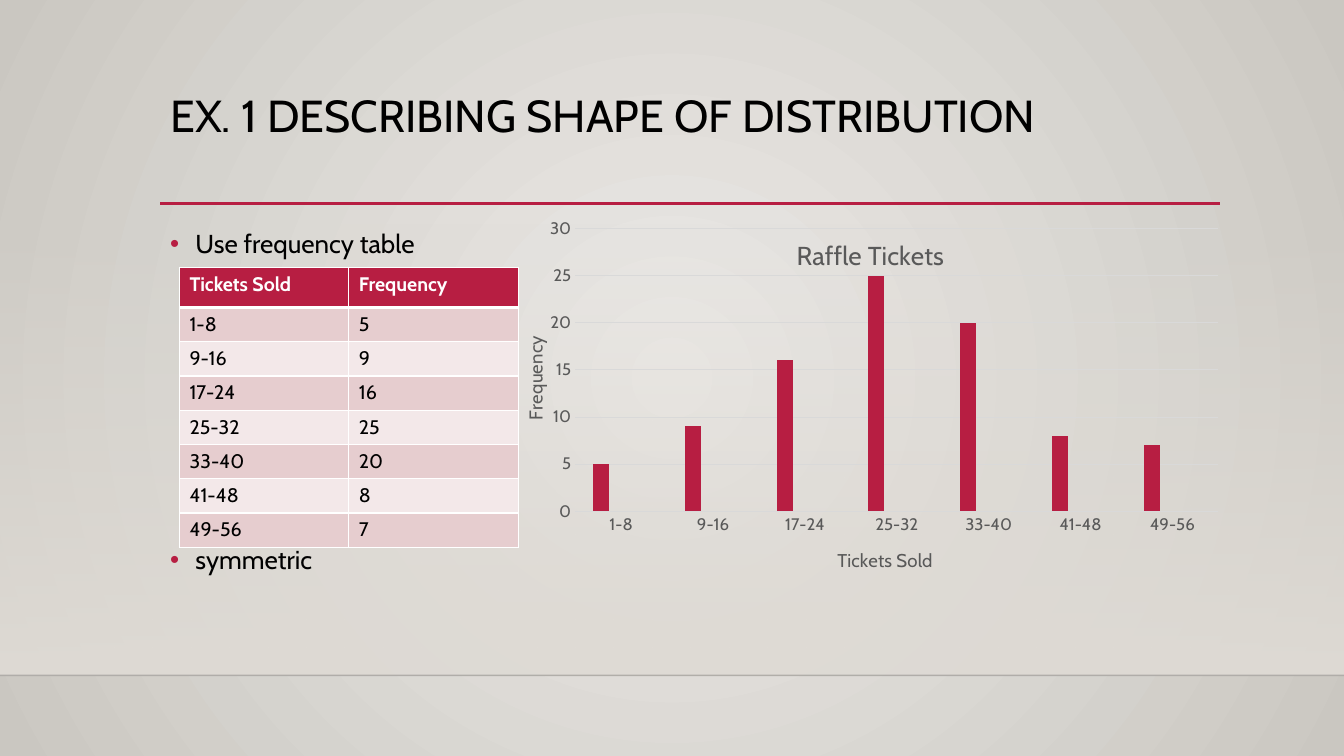
from lxml.etree import SubElement as Sub
from pptx import Presentation
from pptx.chart.data import CategoryChartData
from pptx.dml.color import RGBColor
from pptx.enum.chart import XL_CHART_TYPE as Chart, XL_TICK_MARK as Tick
from pptx.enum.shapes import MSO_CONNECTOR as Conn, MSO_SHAPE as Shape
from pptx.oxml import parse_xml
from pptx.oxml.ns import nsdecls, qn
from pptx.util import Inches, Pt

FONT = "Cabin"
BLACK = RGBColor(0, 0, 0)
WHITE = RGBColor(255, 255, 255)
RED = RGBColor(0xB7, 0x1E, 0x42)
PINK = RGBColor(0xDE, 0x47, 0x8E)
PURPLE = RGBColor(0xBC, 0x72, 0xF0)
ROSE = RGBColor(0xE6, 0xCD, 0xCF)
BLUSH = RGBColor(0xF3, 0xE8, 0xE9)
GRAY = RGBColor(0x59, 0x59, 0x59)
RULE = RGBColor(0xD9, 0xD9, 0xD9)
INK = RGBColor(0, 0, 1)
PALE = RGBColor(0xEC, 0xEA, 0xE7)
STONE = RGBColor(0xCA, 0xC7, 0xC1)
SAND = RGBColor(0xDF, 0xDB, 0xD5)


def write(frame, text, size=14, color=BLACK, bold=False,
          bullet=False, before=0, line=None):
    """Fill the first paragraph, or add one if it is taken."""
    para = frame.paragraphs[0]
    if para.runs:
        para = frame.add_paragraph()
    if line:
        para.line_spacing = line
    if before:
        para.space_before = Pt(before)
    if bullet:
        props = para._p.get_or_add_pPr()
        props.set("marL", str(Inches(0.25)))
        props.set("indent", str(-Inches(0.25)))
        Sub(Sub(props, qn("a:buClr")), qn("a:srgbClr"), val=str(RED))
        Sub(props, qn("a:buFont"), typeface="Arial")
        Sub(props, qn("a:buChar"), char="•")
    run = para.add_run()
    run.text = text
    font = run.font
    font.name, font.size, font.bold = FONT, Pt(size), bold
    font.color.rgb = color


def place(node, index, **parts):
    """Give a chart part a manual layout, in fractions of the chart."""
    old = node.find(qn("c:layout"))
    if old is not None:
        node.remove(old)
    layout = parse_xml(f"<c:layout {nsdecls('c')}/>")
    manual = Sub(layout, qn("c:manualLayout"))
    if "w" in parts:
        Sub(manual, qn("c:layoutTarget"), val="inner")
    for key in "xy":
        Sub(manual, qn(f"c:{key}Mode"), val="edge")
    for key, value in parts.items():
        Sub(manual, qn(f"c:{key}"), val=str(value))
    node.insert(index, layout)


deck = Presentation()
deck.slide_width, deck.slide_height = Inches(13.33), Inches(7.5)
slide = deck.slides.add_slide(deck.slide_layouts[6])
shapes = slide.shapes

# Background and floor
back = slide.background.fill
back.gradient()
for stop, color in zip(back.gradient_stops, (PALE, STONE)):
    stop.color.rgb = color
grad = slide.element.find(".//" + qn("a:gradFill"))
grad.remove(grad.find(qn("a:lin")))
glow = Sub(grad, qn("a:path"), {"path": "circle"})
Sub(glow, qn("a:fillToRect"), l="50000", t="50000", r="50000", b="50000")

wall = shapes.add_shape(Shape.RECTANGLE, 0, Inches(2.21), Inches(13.33), Inches(4.49))
wall.shadow.inherit = False
wall.line.fill.background()
wall.fill.gradient()
wall.fill.gradient_angle = 270
for stop in wall.fill.gradient_stops:
    stop.color.rgb = SAND
Sub(wall.element.find(".//" + qn("a:srgbClr")), qn("a:alpha"), val="0")

for left, right, y, color, width, alpha in (
        (0, 13.33, 6.7, INK, 1, 20), (1.59, 12.1, 2.02, RED, 2.5, 100)):
    rule = shapes.add_connector(Conn.STRAIGHT, Inches(left), Inches(y), Inches(right), Inches(y))
    rule.line.color.rgb = color
    rule.line.width = Pt(width)
    Sub(rule.element.find(".//" + qn("a:srgbClr")), qn("a:alpha"), val=str(alpha * 1000))
    Sub(rule.element.spPr, qn("a:effectLst"))

# Title and bullets
title = shapes.add_textbox(Inches(1.59), Inches(0.88), Inches(10.5), Inches(1.15)).text_frame
title.word_wrap = True
write(title, "EX. 1 DESCRIBING SHAPE OF DISTRIBUTION", size=32, line=0.9)

body = shapes.add_textbox(Inches(1.59), Inches(2.21), Inches(10.5), Inches(3.77)).text_frame
body.word_wrap = True
write(body, "Use frequency table", size=18.5, bullet=True)
write(body, "symmetric", size=18.5, bullet=True, before=203.5)

# Chart
sales = {"1-8": 5, "9-16": 9, "17-24": 16, "25-32": 25,
         "33-40": 20, "41-48": 8, "49-56": 7}
data = CategoryChartData()
data.categories = list(sales)
data.add_series("Series 1", list(sales.values()))
for name in ("Series 2", "Series 3"):
    data.add_series(name, [None] * len(sales))
chart = shapes.add_chart(Chart.COLUMN_CLUSTERED, Inches(5.15), Inches(2.17),
                         Inches(6.94), Inches(4.14), data).chart
chart.has_legend = False
chart.font.name, chart.font.size = FONT, Pt(10)
chart.font.color.rgb = BLACK
plot = chart.plots[0]
plot.gap_width, plot.overlap = 219, -27
plot.vary_by_categories = False
for series, color in zip(plot.series, (RED, PINK, PURPLE)):
    series.format.fill.solid()
    series.format.fill.fore_color.rgb = color
place(chart.element.find(".//" + qn("c:plotArea")), 0, x=0.08, y=0.02, w=0.92, h=0.68)

across, up = chart.category_axis, chart.value_axis
for axis in (across, up):
    axis.major_tick_mark = axis.minor_tick_mark = Tick.NONE
    font = axis.tick_labels.font
    font.name, font.size = FONT, Pt(12)
    font.color.rgb = GRAY
up.minimum_scale, up.maximum_scale, up.major_unit = 0, 30, 5
up.format.line.fill.background()
for line in (across.format.line, up.major_gridlines.format.line):
    line.color.rgb = RULE
    line.width = Pt(0.75)

for head, text, size, x, y in (
        (chart.chart_title, "Raffle Tickets", 18.6, 0.39, 0.03),
        (across.axis_title, "Tickets Sold", 13.3, 0.45, 0.78),
        (up.axis_title, "Frequency", 13.3, 0, 0.27)):
    write(head.text_frame, text, size=size, color=GRAY)
    place(head.element, 1, x=x, y=y)
turn = up.axis_title.element.find(".//" + qn("a:bodyPr"))
turn.set("rot", "-5400000")
turn.set("vert", "horz")

# Frequency table
rows = [("Tickets Sold", "Frequency"), *sales.items()]
table = shapes.add_table(len(rows), 2, Inches(1.78), Inches(2.65),
                         Inches(3.36), Inches(2.78)).table
for r, row in enumerate(rows):
    table.rows[r].height = Inches(0.34 if r else 0.4)
    for c, value in enumerate(row):
        cell = table.cell(r, c)
        write(cell.text_frame, str(value), color=BLACK if r else WHITE, bold=r == 0)
        props = cell._tc.get_or_add_tcPr()
        for side in "LRTB":
            thick = (r, side) in ((0, "B"), (1, "T"))
            edge = Sub(props, qn(f"a:ln{side}"), w=str(Pt(3 if thick else 1)))
            Sub(Sub(edge, qn("a:solidFill")), qn("a:srgbClr"), val=str(WHITE))
        cell.fill.solid()
        cell.fill.fore_color.rgb = RED if r == 0 else ROSE if r % 2 else BLUSH

deck.save("out.pptx")
